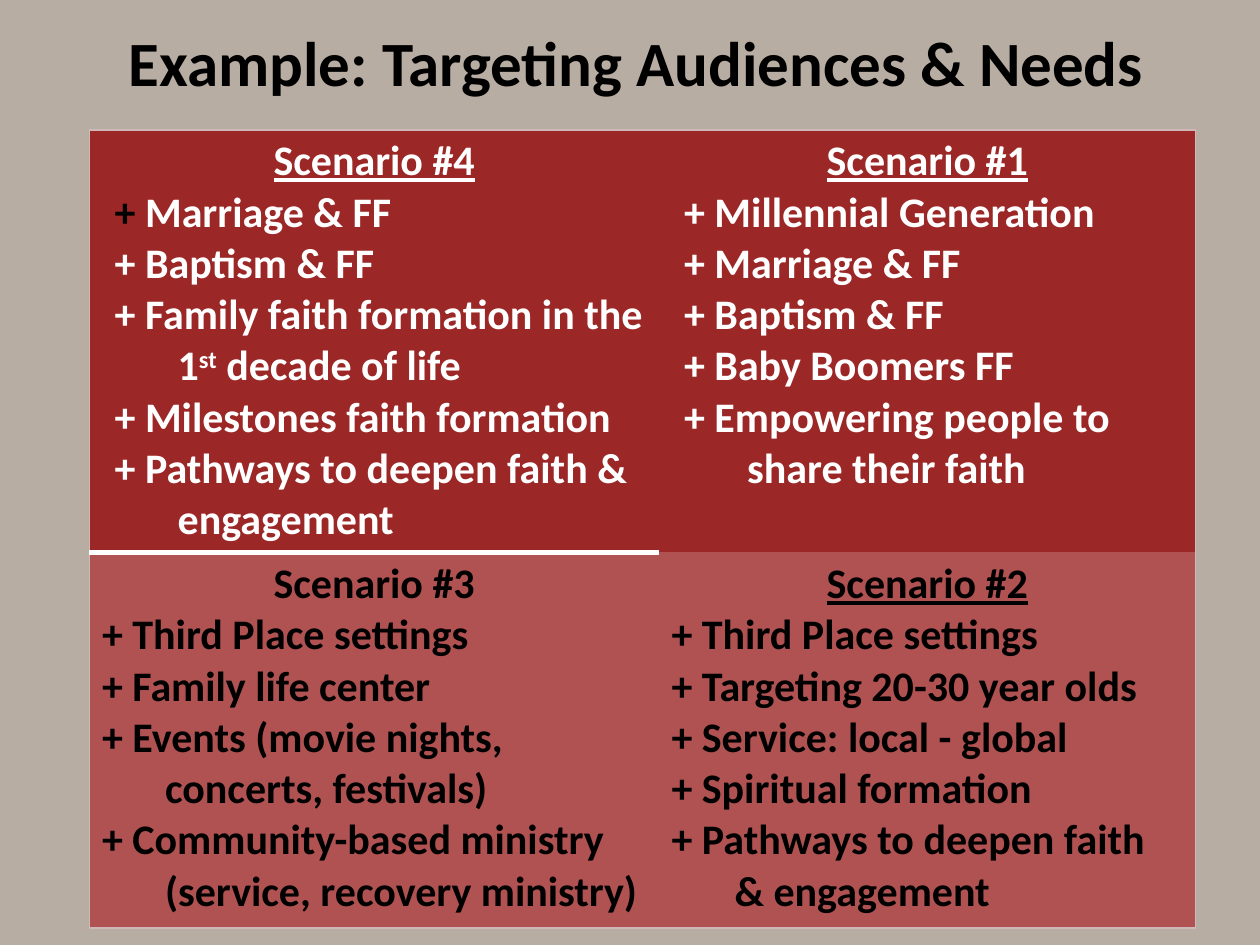
import pptx
import pptx.dml.color
import pptx.enum.text
import pptx.oxml.ns
import pptx.util
from lxml import etree

Inches = pptx.util.Inches
Pt = pptx.util.Pt
RGBColor = pptx.dml.color.RGBColor
CENTER = pptx.enum.text.PP_ALIGN.CENTER

SAND = RGBColor(0xB7, 0xAD, 0xA3)
RED = RGBColor(0x9C, 0x27, 0x27)
ROSE = RGBColor(0xB0, 0x52, 0x52)
PALE = RGBColor(0xD0, 0xB8, 0xB8)
WHITE = RGBColor(0xFF, 0xFF, 0xFF)
BLACK = RGBColor(0, 0, 0)

TITLE = "Example: Targeting Audiences & Needs"
COLUMNS = [4.52, 4.26]
OUTER, DIVIDER = (PALE, 1), (WHITE, 3)
ROWS = [
    {"height": 3.31, "fill": RED, "color": WHITE, "margin": 0.6},
    {"height": 2.98, "fill": ROSE, "color": BLACK, "margin": 0.5},
]
SCENARIOS = [
    [
        {"heading": "Scenario #4", "underline": True, "first_plus": BLACK,
         "edges": {"L": OUTER, "T": OUTER, "B": DIVIDER},
         "items": ["Marriage & FF", "Baptism & FF",
                   ("Family faith formation in the 1", "st", " decade of life"),
                   "Milestones faith formation",
                   "Pathways to deepen faith & engagement"]},
        {"heading": "Scenario #1", "underline": True,
         "edges": {"T": OUTER, "R": OUTER},
         "items": ["Millennial Generation", "Marriage & FF", "Baptism & FF",
                   "Baby Boomers FF", "Empowering people to share their faith"]},
    ],
    [
        {"heading": "Scenario #3", "underline": False,
         "edges": {"L": OUTER, "T": DIVIDER, "B": OUTER},
         "items": ["Third Place settings", "Family life center",
                   "Events (movie nights, concerts, festivals)",
                   "Community-based ministry (service, recovery ministry)"]},
        {"heading": "Scenario #2", "underline": True,
         "edges": {"R": OUTER, "B": OUTER},
         "items": ["Third Place settings", "Targeting 20-30 year olds",
                   "Service: local - global", "Spiritual formation",
                   "Pathways to deepen faith & engagement"]},
    ],
]


def add_span(para, text, color, size=24, underline=False):
    span = para.add_run()
    span.text = text
    span.font.color.rgb = color
    style = {"name": "Calibri", "size": Pt(size), "bold": True, "underline": underline}
    for name, value in style.items():
        setattr(span.font, name, value)
    return span


def draw_borders(cell, edges):
    properties = cell._tc.get_or_add_tcPr()
    for side in "LRTB":
        line = etree.SubElement(properties, pptx.oxml.ns.qn("a:ln" + side))
        if side in edges:
            color, width = edges[side]
            line.set("w", str(Pt(width)))
            fill = etree.SubElement(line, pptx.oxml.ns.qn("a:solidFill"))
            etree.SubElement(fill, pptx.oxml.ns.qn("a:srgbClr")).set("val", str(color))
        else:
            etree.SubElement(line, pptx.oxml.ns.qn("a:noFill"))


def fill_cell(cell, row, scenario):
    draw_borders(cell, scenario["edges"])
    cell.fill.solid()
    cell.fill.fore_color.rgb = row["fill"]
    color = row["color"]
    heading = cell.text_frame.paragraphs[0]
    heading.alignment = CENTER
    add_span(heading, scenario["heading"], color, underline=scenario["underline"])
    for index, item in enumerate(scenario["items"]):
        para = cell.text_frame.add_paragraph()
        indents = para._p.get_or_add_pPr()
        indents.set("marL", str(Inches(row["margin"])))
        indents.set("indent", str(Inches(-0.5)))
        plus_color = scenario.get("first_plus", color) if index == 0 else color
        add_span(para, "+ ", plus_color)
        parts = (item,) if isinstance(item, str) else item
        for position, text in enumerate(parts):
            span = add_span(para, text, color)
            if position == 1:
                span.font._element.set("baseline", "30000")


def main():
    deck = pptx.Presentation()
    deck.slide_width, deck.slide_height = Inches(10), Inches(7.5)
    page = deck.slides.add_slide(deck.slide_layouts[6])
    page.background.fill.solid()
    page.background.fill.fore_color.rgb = SAND

    height = sum(row["height"] for row in ROWS)
    table = page.shapes.add_table(
        len(ROWS), len(COLUMNS), Inches(0.71), Inches(1.03),
        Inches(sum(COLUMNS)), Inches(height)).table
    table.first_row = table.horz_banding = False
    for column, width in zip(table.columns, COLUMNS):
        column.width = Inches(width)
    for row_index, row in enumerate(ROWS):
        table.rows[row_index].height = Inches(row["height"])
        for column_index, scenario in enumerate(SCENARIOS[row_index]):
            fill_cell(table.cell(row_index, column_index), row, scenario)

    box = page.shapes.add_textbox(Inches(0.43), Inches(0.14), Inches(9.24), Inches(0.71))
    box.text_frame.word_wrap = True
    para = box.text_frame.paragraphs[0]
    para.alignment = CENTER
    add_span(para, TITLE, BLACK, size=36)
    deck.save("out.pptx")


if __name__ == "__main__":
    main()
